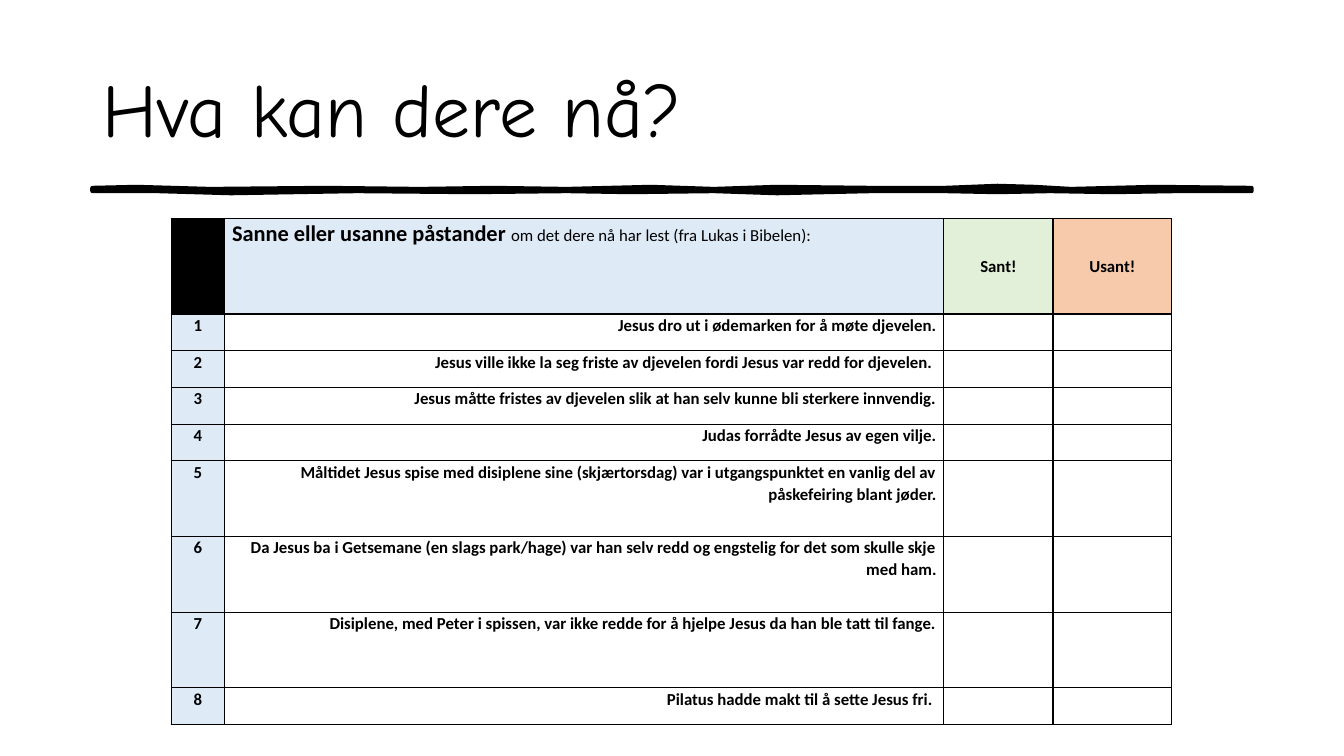
"""Build the true-or-false quiz slide with its title, brushed rule and table."""
from dataclasses import dataclass

from lxml import etree
from pptx import Presentation
from pptx.dml.color import RGBColor
from pptx.enum.text import MSO_ANCHOR, MSO_AUTO_SIZE, PP_ALIGN
from pptx.oxml.ns import qn
from pptx.util import Pt

PX = 9525
LEFT, CENTER, RIGHT = PP_ALIGN.LEFT, PP_ALIGN.CENTER, PP_ALIGN.RIGHT
TOP, MIDDLE = MSO_ANCHOR.TOP, MSO_ANCHOR.MIDDLE
NO_AUTOFIT = MSO_AUTO_SIZE.NONE
TITLE_ONLY = 5
COLORS = {"black": "000000", "blue": "DEEAF6", "green": "E2EFD9", "orange": "F7CAAC"}
TITLE_FONT, BODY_FONT = "Comic Neue", "Calibri"

COLUMN_WIDTHS = (51, 685, 104, 113)
HEADER_HEIGHT = 91
TABLE_LEFT, TABLE_TOP = 163, 208
RULE_TOP = (
    (88, 179), (130, 178), (200, 180), (310, 179), (400, 180), (470, 179),
    (540, 180), (620, 178), (680, 180), (740, 178), (830, 179), (900, 179),
    (950, 177), (985, 178), (1020, 180), (1100, 178), (1192, 179),
)
RULE_BOTTOM = (
    (1192, 182), (1120, 182), (1060, 183), (1000, 182), (950, 183), (900, 182),
    (830, 182), (740, 184), (680, 182), (600, 183), (540, 182), (450, 183),
    (340, 182), (220, 184), (150, 182), (88, 182),
)


@dataclass(frozen=True)
class TextRun:
    """A piece of text with its own size and weight."""
    text: str
    size: int = 12
    bold: bool = True


@dataclass(frozen=True)
class CellStyle:
    """Fill, alignment and anchor of a table cell."""
    fill: str | None = None
    align: PP_ALIGN = LEFT
    anchor: MSO_ANCHOR = TOP


@dataclass(frozen=True)
class Statement:
    """A statement to judge, with the height of its row."""
    text: str
    height: int = 35


HEADERS = (
    ((), CellStyle("black")),
    ((TextRun("Sanne eller usanne påstander ", 16),
      TextRun("om det dere nå har lest (fra Lukas i Bibelen):", bold=False)),
     CellStyle("blue")),
    ((TextRun("Sant!"),), CellStyle("green", CENTER, MIDDLE)),
    ((TextRun("Usant!"),), CellStyle("orange", CENTER, MIDDLE)),
)
STATEMENTS = (
    Statement("Jesus dro ut i ødemarken for å møte djevelen."),
    Statement("Jesus ville ikke la seg friste av djevelen fordi Jesus var redd for djevelen. "),
    Statement("Jesus måtte fristes av djevelen slik at han selv kunne bli sterkere innvendig."),
    Statement("Judas forrådte Jesus av egen vilje."),
    Statement("Måltidet Jesus spise med disiplene sine (skjærtorsdag) var i "
              "utgangspunktet en vanlig del av påskefeiring blant jøder.", 72),
    Statement("Da Jesus ba i Getsemane (en slags park/hage) var han selv redd og "
              "engstelig for det som skulle skje med ham.", 72),
    Statement("Disiplene, med Peter i spissen, var ikke redde for å hjelpe Jesus "
              "da han ble tatt til fange.", 72),
    Statement("Pilatus hadde makt til å sette Jesus fri. "),
)


def color(name: str) -> RGBColor:
    """Look up a named colour."""
    return RGBColor.from_string(COLORS[name])


def add_run(p, run: TextRun, font: str) -> None:
    """Append a formatted run to a paragraph."""
    r = p.add_run()
    r.text = run.text
    r.font.name = font
    r.font.size = Pt(run.size)
    r.font.bold = run.bold
    r.font.color.rgb = color("black")


def add_title(s) -> None:
    """Place and fill the title placeholder."""
    sp = s.shapes.title
    sp.left, sp.top, sp.width, sp.height = (v * PX for v in (88, 38, 1104, 139))
    tf = sp.text_frame
    tf.word_wrap = True
    tf.auto_size = NO_AUTOFIT
    tf.vertical_anchor = MIDDLE
    p = tf.paragraphs[0]
    p.alignment = LEFT
    p.line_spacing = 0.9
    add_run(p, TextRun("Hva kan dere nå?", 54, False), TITLE_FONT)


def add_rule(s) -> None:
    """Draw the uneven brushed line below the title."""
    start, *others = RULE_TOP + RULE_BOTTOM
    builder = s.shapes.build_freeform(*start, scale=PX)
    builder.add_line_segments(others, close=True)
    sp = builder.convert_to_shape()
    sp.shadow.inherit = False
    sp.fill.solid()
    sp.fill.fore_color.rgb = color("black")
    sp.line.color.rgb = color("black")
    sp.line.width = Pt(3)


def add_borders(cell) -> None:
    """Give a cell thin black borders on all sides."""
    tc_pr = cell._tc.get_or_add_tcPr()
    for index, side in enumerate(("lnL", "lnR", "lnT", "lnB")):
        ln = etree.Element(qn(f"a:{side}"), w=str(Pt(1)))
        fill = etree.SubElement(ln, qn("a:solidFill"))
        etree.SubElement(fill, qn("a:srgbClr"), val=COLORS["black"])
        tc_pr.insert(index, ln)


def fill_cell(cell, runs: tuple[TextRun, ...], style: CellStyle) -> None:
    """Format a cell and write its runs."""
    cell.margin_left = cell.margin_right = 7 * PX
    cell.margin_top = cell.margin_bottom = 0
    cell.vertical_anchor = style.anchor
    if style.fill:
        cell.fill.solid()
        cell.fill.fore_color.rgb = color(style.fill)
    else:
        cell.fill.background()
    add_borders(cell)
    p = cell.text_frame.paragraphs[0]
    p.alignment = style.align
    p.line_spacing = 1.07
    p.space_after = Pt(8)
    for run in runs:
        add_run(p, run, BODY_FONT)


def add_quiz(s) -> None:
    """Add the table of statements."""
    heights = (HEADER_HEIGHT, *(st.height for st in STATEMENTS))
    box = (TABLE_LEFT, TABLE_TOP, sum(COLUMN_WIDTHS), sum(heights))
    table = s.shapes.add_table(len(heights), len(COLUMN_WIDTHS),
                               *(v * PX for v in box)).table
    table.first_row = table.horz_banding = False
    for column, width in zip(table.columns, COLUMN_WIDTHS):
        column.width = width * PX
    for row, height in zip(table.rows, heights):
        row.height = height * PX
    rows = [HEADERS]
    for number, statement in enumerate(STATEMENTS, 1):
        rows.append((
            ((TextRun(str(number)),), CellStyle("blue", CENTER)),
            ((TextRun(statement.text),), CellStyle(align=RIGHT)),
            ((), CellStyle()),
            ((), CellStyle()),
        ))
    for i, row in enumerate(rows):
        for j, (runs, style) in enumerate(row):
            fill_cell(table.cell(i, j), runs, style)


def main() -> None:
    """Build and save the slide."""
    prs = Presentation()
    prs.slide_width, prs.slide_height = 1280 * PX, 720 * PX
    s = prs.slides.add_slide(prs.slide_layouts[TITLE_ONLY])
    add_rule(s)
    add_title(s)
    add_quiz(s)
    prs.save("out.pptx")


if __name__ == "__main__":
    main()
